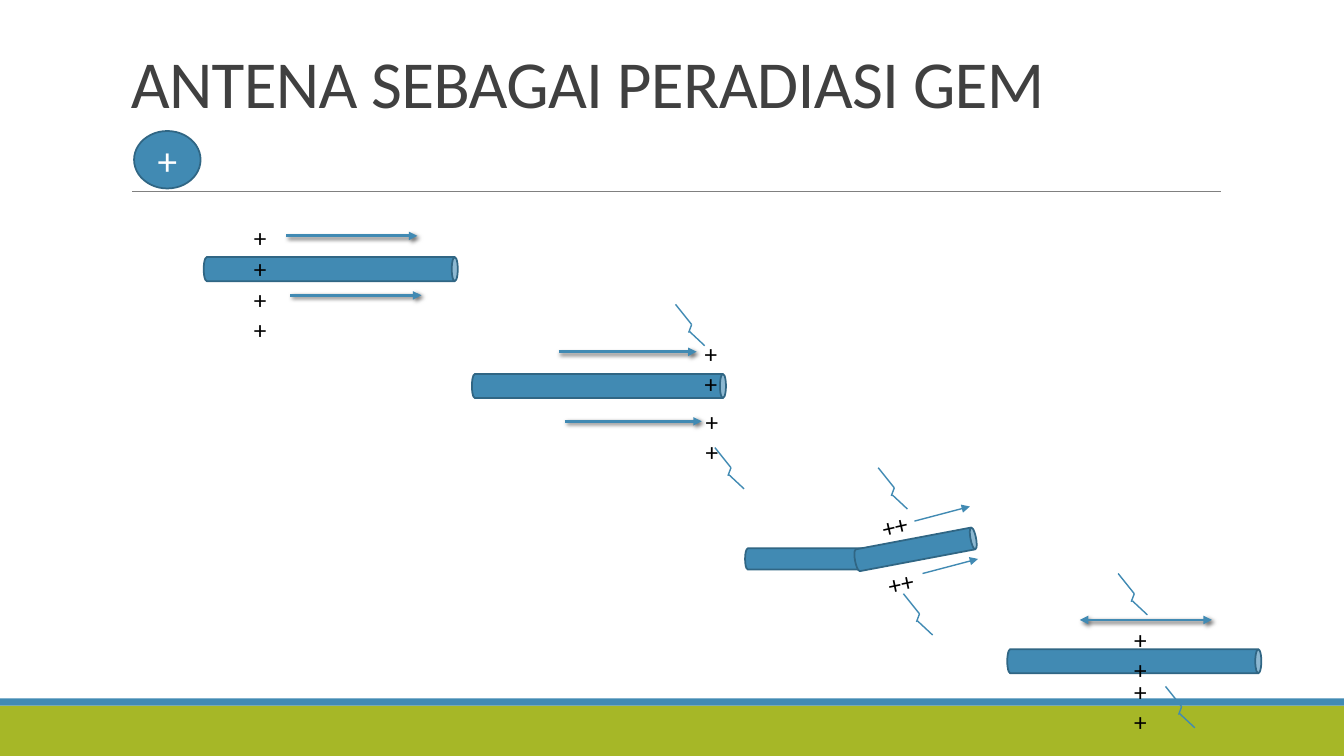
from lxml import etree
from pptx import Presentation
from pptx.dml.color import RGBColor
from pptx.enum.shapes import MSO_CONNECTOR, MSO_SHAPE
from pptx.enum.text import MSO_ANCHOR, PP_ALIGN
from pptx.oxml.ns import qn
from pptx.util import Inches, Pt

STRAIGHT = MSO_CONNECTOR.STRAIGHT
RECTANGLE, OVAL, CAN = MSO_SHAPE.RECTANGLE, MSO_SHAPE.OVAL, MSO_SHAPE.CAN
TOP, MIDDLE, BOTTOM = MSO_ANCHOR.TOP, MSO_ANCHOR.MIDDLE, MSO_ANCHOR.BOTTOM
LEFT, CENTER = PP_ALIGN.LEFT, PP_ALIGN.CENTER

BLUE = RGBColor(0x41, 0x8A, 0xB3)
DARK_BLUE = RGBColor(0x30, 0x66, 0x84)
GREEN = RGBColor(0xA6, 0xB7, 0x27)
GRAY = RGBColor(0x80, 0x80, 0x80)
TITLE_GRAY = RGBColor(0x40, 0x40, 0x40)
BLACK = RGBColor(0, 0, 0)
WHITE = RGBColor(0xFF, 0xFF, 0xFF)

FONT = "Calibri"
COLUMNS, ROWS = 133.3, 75
CELL = Inches(0.1)
ROD_LENGTH, ROD_THICKNESS = 25.2, 2.4
SPARK_SEGMENTS = [(0, 0, 1.6, 2), (1.6, 2, 1.3, 2.8), (1.4, 2.7, 2.9, 4.1)]


def grid(*cells):
    return [round(cell * CELL) for cell in cells]


def add_run(frame, text, size, color, align=LEFT):
    paragraph = frame.paragraphs[0]
    paragraph.alignment = align
    run = paragraph.add_run()
    run.text = text
    run.font.name = FONT
    run.font.size = Pt(size)
    run.font.color.rgb = color
    return run


def add_text(slide, box, text, size, color, anchor=TOP, rotation=0):
    text_box = slide.shapes.add_textbox(*grid(*box))
    text_box.rotation = rotation
    frame = text_box.text_frame
    frame.word_wrap = True
    frame.vertical_anchor = anchor
    return frame, add_run(frame, text, size, color)


def add_filled(slide, kind, box, fill, outline=None):
    shape = slide.shapes.add_shape(kind, *grid(*box))
    shape.shadow.inherit = False
    shape.fill.solid()
    shape.fill.fore_color.rgb = fill
    if outline is None:
        shape.line.fill.background()
    else:
        shape.line.color.rgb = outline
        shape.line.width = Pt(1.25)
    return shape


def add_line(slide, points, color=BLUE, width=1, ends=(), shadow=False):
    connector = slide.shapes.add_connector(STRAIGHT, *grid(*points))
    connector.line.color.rgb = color
    connector.line.width = Pt(width)
    for end in ends:
        etree.SubElement(connector.line._get_or_add_ln(), qn(end), type="triangle")
    properties = connector._element.spPr
    effects = etree.SubElement(properties, qn("a:effectLst"))
    if shadow:
        outer = etree.SubElement(effects, qn("a:outerShdw"), blurRad=str(Pt(3)),
                                 dist=str(Pt(2)), dir="2700000", rotWithShape="0")
        shade = etree.SubElement(outer, qn("a:srgbClr"), val=str(BLACK))
        etree.SubElement(shade, qn("a:alpha"), val="60000")


def add_rod(slide, left, top, length, thickness, rotation=90):
    box = (left + (length - thickness) / 2, top - (length - thickness) / 2,
           thickness, length)
    rod = add_filled(slide, CAN, box, BLUE, DARK_BLUE)
    rod.rotation = rotation


def add_sparks(slide, left, top, sparks):
    for across, down in sparks:
        x, y = left + across, top + down
        for x1, y1, x2, y2 in SPARK_SEGMENTS:
            add_line(slide, (x + x1, y + y1, x + x2, y + y2))


def add_straight_antenna(slide, origin, arrows, charges, sparks=(), ends=("a:tailEnd",)):
    left, top = origin
    add_rod(slide, left, top, ROD_LENGTH, ROD_THICKNESS)
    for start, stop, down in arrows:
        add_line(slide, (left + start, top + down, left + stop, top + down),
                 width=2, ends=ends, shadow=True)
    for across, down in charges:
        add_text(slide, (left + across, top + down, 3.8, 3.6), "++", 18, BLACK)
    add_sparks(slide, left, top, sparks)


def add_bent_antenna(slide, origin):
    left, top = origin
    add_rod(slide, left, top, 12.2, 2.1)
    add_rod(slide, left + 10.8, top - 1, 12.2, 2.2, 79.3)
    for across, down, rotation in [(12.6, -4.4, 347.1), (13.2, 1.3, 348.2)]:
        add_text(slide, (left + across, top + down, 5.6, 4.1), "++", 18, BLACK,
                 rotation=rotation)
    for across, down in [(16.8, -2.7), (17.6, 2.5)]:
        x, y = left + across, top + down
        add_line(slide, (x, y, x + 5.5, y - 1.45), ends=("a:tailEnd",))
    add_sparks(slide, left, top, [(13.2, -8), (15.7, 4.5)])


def add_header(slide, box):
    left, top, width, height = box
    add_line(slide, (left + 1.1, top + 15.9, left + width - 0.9, top + 15.9), GRAY, 0.5)
    frame, run = add_text(slide, box, "ANTENA SEBAGAI PERADIASI GEM", 48,
                          TITLE_GRAY, BOTTOM)
    frame.paragraphs[0].line_spacing = 0.85
    run.font._element.set("spc", "-50")
    charge = add_filled(slide, OVAL, (left + 1.3, top + 9.9, 6.6, 5.7), BLUE, DARK_BLUE)
    charge.text_frame.vertical_anchor = MIDDLE
    add_run(charge.text_frame, "+", 28, WHITE, CENTER)


def add_footer(slide, box):
    left, top, width, height = box
    add_filled(slide, RECTANGLE, (left, top + 0.7, width, height - 0.7), GREEN)
    add_filled(slide, RECTANGLE, (left, top, width, 0.7), BLUE)


def main():
    presentation = Presentation()
    presentation.slide_width, presentation.slide_height = grid(COLUMNS, ROWS)
    slide = presentation.slides.add_slide(presentation.slide_layouts[6])
    add_footer(slide, (0, ROWS - 5.7, COLUMNS, 5.7))
    add_header(slide, (12, 3.1, 110, 9.5))
    add_straight_antenna(slide, (20.2, 25.5),
                         arrows=[(8.2, 21.2, -2.1), (8.6, 21.6, 3.8)],
                         charges=[(4, -3.9), (4, 2.2)])
    add_straight_antenna(slide, (46.8, 37.1),
                         arrows=[(8.6, 22.3, -2.2), (9.2, 22.8, 4.7)],
                         charges=[(22.1, -4), (22.2, 2.7)],
                         sparks=[(20.2, -6.9), (24.1, 7.3)])
    add_straight_antenna(slide, (99.9, 64.4),
                         arrows=[(7.2, 20.3, -2.9)],
                         charges=[(11.6, -3), (11.6, 2.2)],
                         sparks=[(11, -7.5), (15.7, 3.7)],
                         ends=("a:headEnd", "a:tailEnd"))
    add_bent_antenna(slide, (73.9, 54.4))
    presentation.save("out.pptx")


if __name__ == "__main__":
    main()
